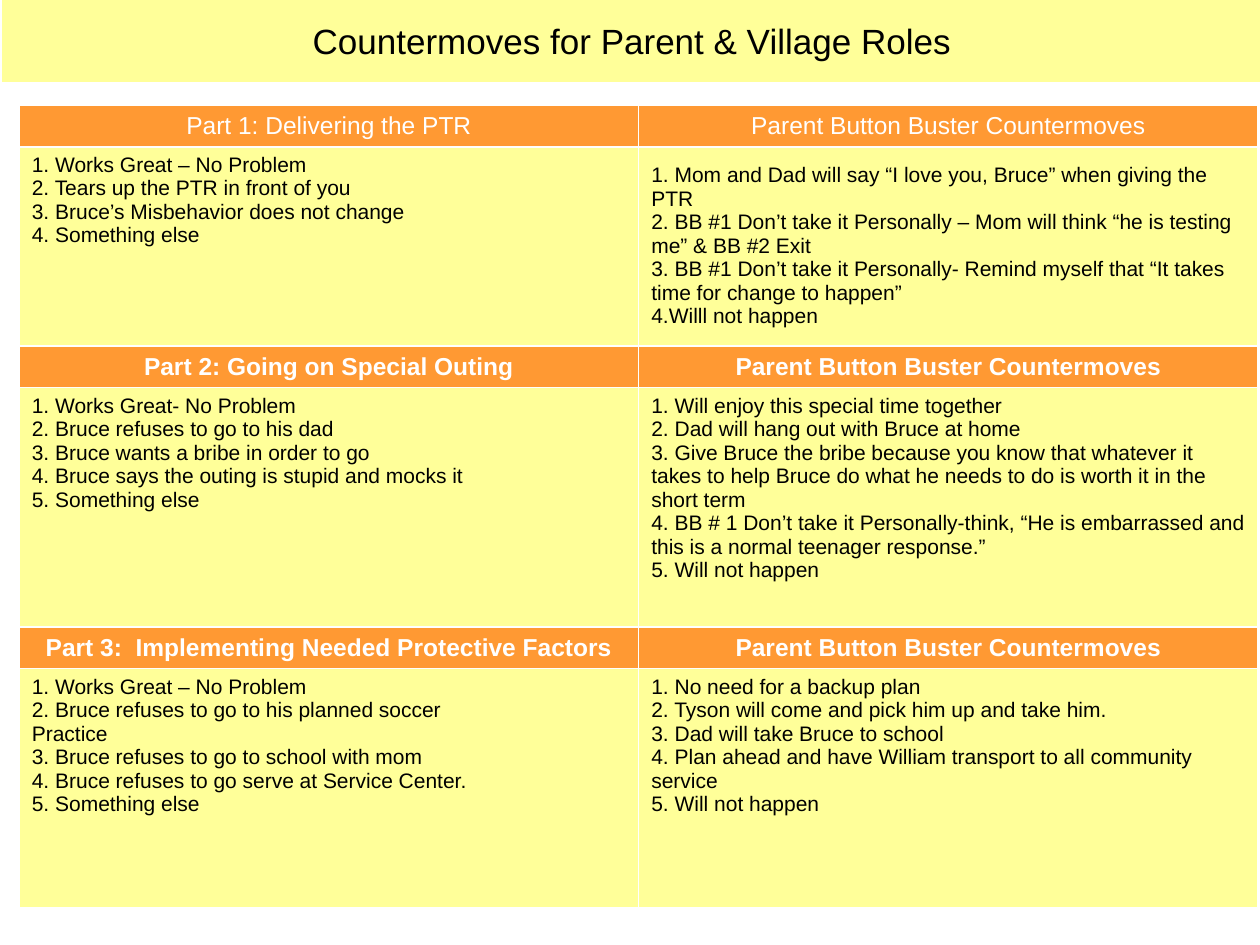
from pptx import Presentation
from pptx.dml.color import RGBColor
from pptx.enum.shapes import MSO_SHAPE
from pptx.enum.text import MSO_ANCHOR, PP_ALIGN
from pptx.util import Pt

YELLOW, ORANGE, WHITE, BLACK = "FFFF99", "FF9933", "FFFFFF", "000000"

TITLE = "Countermoves for Parent & Village Roles"
COUNTERMOVES = "Parent Button Buster Countermoves"

# Each part: heading, body height, what may happen, countermoves
PARTS = [
    ("Part 1: Delivering the PTR", 113.8,
     ["1. Works Great – No Problem",
      "2. Tears up the PTR in front of you",
      "3. Bruce’s Misbehavior does not change",
      "4. Something else"],
     ["1. Mom and Dad will say “I love you, Bruce” when giving the PTR",
      "2. BB #1 Don’t take it Personally – Mom will think “he is testing me” & BB #2 Exit",
      "3. BB #1 Don’t take it Personally- Remind myself that “It takes time for change to happen”",
      "4.Willl not happen"]),
    ("Part 2: Going on Special Outing", 136.8,
     ["1. Works Great- No Problem",
      "2. Bruce refuses to go to his dad",
      "3. Bruce wants a bribe in order to go",
      "4. Bruce says the outing is stupid and mocks it",
      "5. Something else"],
     ["1. Will enjoy this special time together",
      "2. Dad will hang out with Bruce at home",
      "3. Give Bruce the bribe because you know that whatever it takes to help Bruce "
      "do what he needs to do is worth it in the short term",
      "4. BB # 1 Don’t take it Personally-think, “He is embarrassed and this is a "
      "normal teenager response.”",
      "5. Will not happen"]),
    ("Part 3:  Implementing Needed Protective Factors", 136.8,
     ["1. Works Great – No Problem",
      "2. Bruce refuses to go to his planned soccer",
      "Practice",
      "3. Bruce refuses to go to school with mom",
      "4. Bruce refuses to go serve at Service Center.",
      "5. Something else"],
     ["1. No need for a backup plan",
      "2. Tyson will come and pick him up and take him.",
      "3. Dad will take Bruce to school",
      "4. Plan ahead and have William transport to all community service",
      "5. Will not happen"]),
]

SLIDE_WIDTH, SLIDE_HEIGHT = 720, 540
TABLE_LEFT, TABLE_TOP, COLUMN_WIDTH = 11, 60.2, 354
HEADING_HEIGHT = 23.8
FIRST_COUNTERMOVES_INSET = 9.4


def paint(target, color):
    target.fill.solid()
    target.fill.fore_color.rgb = RGBColor.from_string(color)


def write(frame, lines, size=12, color=BLACK, bold=False, align=PP_ALIGN.LEFT):
    for index, line in enumerate(lines):
        paragraph = frame.add_paragraph() if index else frame.paragraphs[0]
        paragraph.alignment = align
        run = paragraph.add_run()
        run.text = line
        run.font.name = "Arial"
        run.font.size = Pt(size)
        run.font.bold = bold
        run.font.color.rgb = RGBColor.from_string(color)


def add_title(slide):
    banner = slide.shapes.add_shape(
        MSO_SHAPE.RECTANGLE, Pt(1.2), 0, Pt(SLIDE_WIDTH), Pt(46.8))
    banner.shadow.inherit = False
    banner.line.fill.background()
    paint(banner, YELLOW)
    banner.text_frame.word_wrap = True
    banner.text_frame.vertical_anchor = MSO_ANCHOR.MIDDLE
    write(banner.text_frame, [TITLE], size=20, align=PP_ALIGN.CENTER)


def add_parts_table(slide):
    height = sum(HEADING_HEIGHT + part[1] for part in PARTS)
    table = slide.shapes.add_table(
        2 * len(PARTS), 2, Pt(TABLE_LEFT), Pt(TABLE_TOP),
        Pt(2 * COLUMN_WIDTH), Pt(height)).table
    for column in table.columns:
        column.width = Pt(COLUMN_WIDTH)

    for number, (heading, body_height, events, moves) in enumerate(PARTS):
        heading_row, body_row = 2 * number, 2 * number + 1
        table.rows[heading_row].height = Pt(HEADING_HEIGHT)
        table.rows[body_row].height = Pt(body_height)
        for column, (label, lines) in enumerate(
                [(heading, events), (COUNTERMOVES, moves)]):
            heading_cell = table.cell(heading_row, column)
            heading_cell.vertical_anchor = MSO_ANCHOR.MIDDLE
            paint(heading_cell, ORANGE)
            write(heading_cell.text_frame, [label], size=14, color=WHITE,
                  bold=number > 0, align=PP_ALIGN.CENTER)
            body_cell = table.cell(body_row, column)
            paint(body_cell, YELLOW)
            write(body_cell.text_frame, lines)

    table.cell(1, 1).margin_top = Pt(FIRST_COUNTERMOVES_INSET)


def main():
    presentation = Presentation()
    presentation.slide_width = Pt(SLIDE_WIDTH)
    presentation.slide_height = Pt(SLIDE_HEIGHT)
    slide = presentation.slides.add_slide(presentation.slide_layouts[6])
    add_title(slide)
    add_parts_table(slide)
    presentation.save("out.pptx")


if __name__ == "__main__":
    main()
